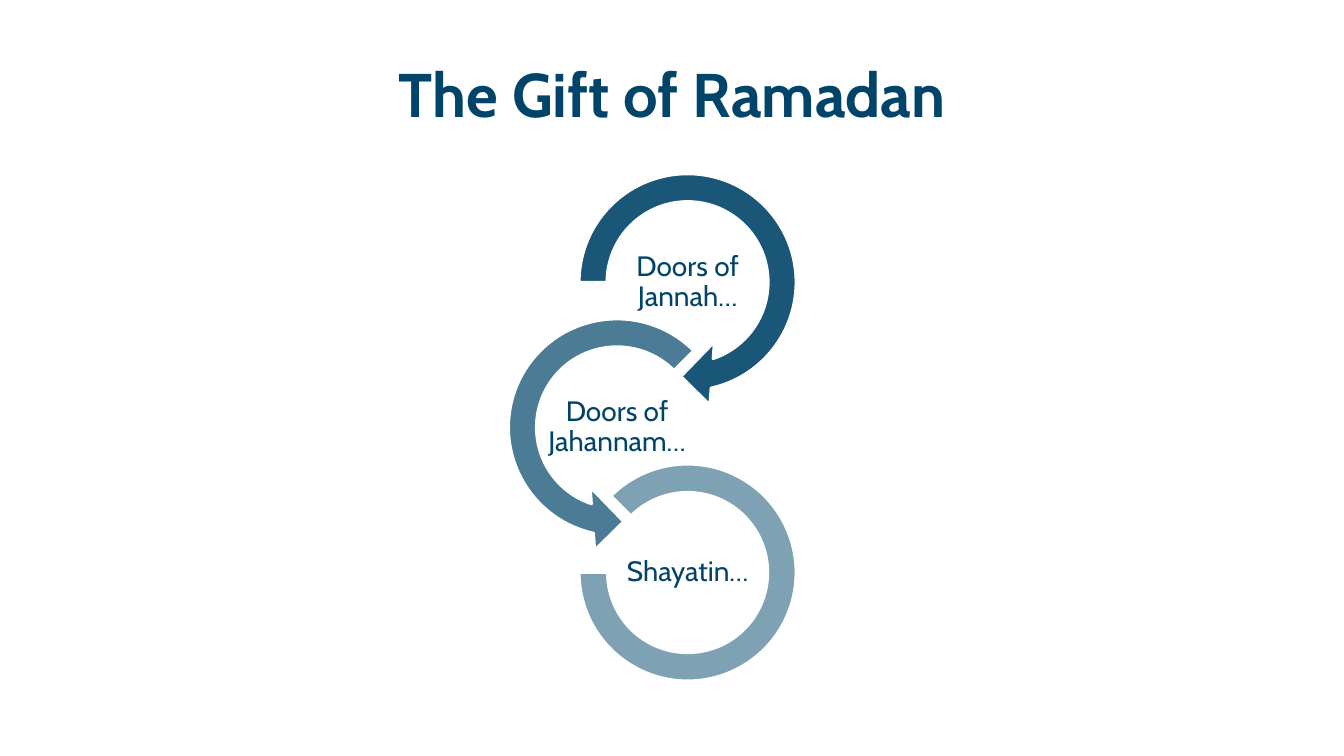
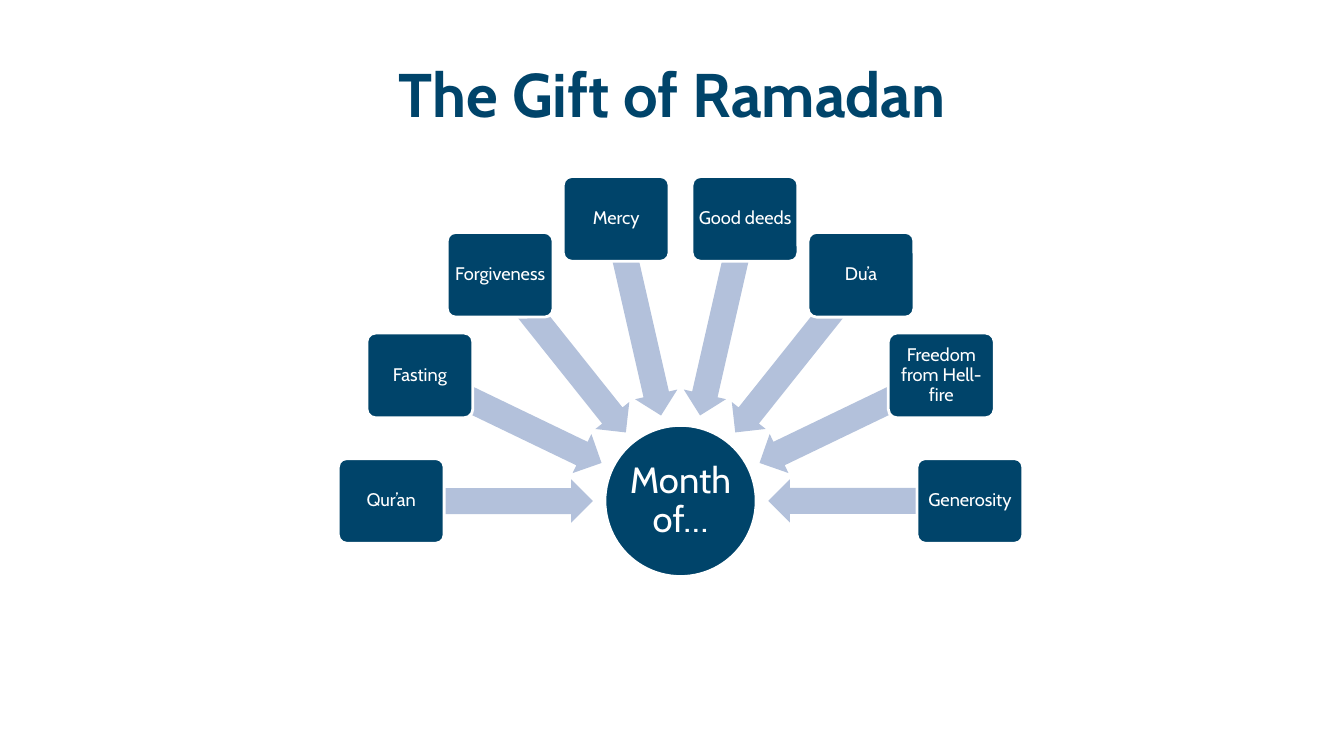
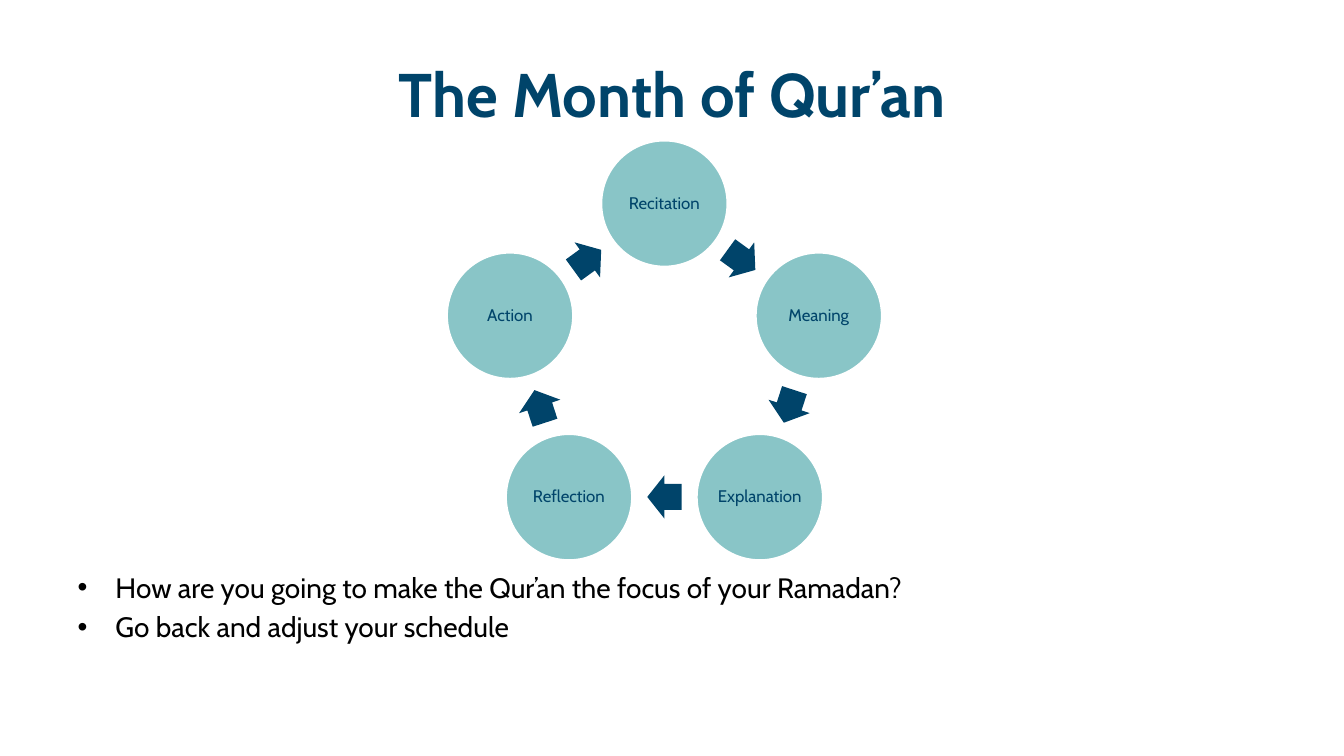
from math import cos, radians, sin

from lxml.etree import SubElement
from pptx import Presentation
from pptx.dml.color import RGBColor
from pptx.enum.shapes import MSO_SHAPE
from pptx.enum.text import MSO_ANCHOR, MSO_AUTO_SIZE, PP_ALIGN
from pptx.oxml.ns import qn
from pptx.util import Inches, Pt

COLORS = {"navy": "00446A", "teal": "89C5C7", "mist": "B3C1DB",
          "white": "FFFFFF", "black": "000000"}
FONT = "Cabin"
TITLE_ONLY, TITLE_AND_BODY = 5, 1


def around(center, radius, degrees):
    """Point on a circle; degrees run clockwise from the right."""
    angle = radians(degrees)
    return center[0] + radius * cos(angle), center[1] + radius * sin(angle)


class Deck:
    def __init__(self):
        self.deck = Presentation()
        self.deck.slide_width = Inches(13.33)
        self.deck.slide_height = Inches(7.5)
        self.page = None

    def color(self, name):
        return RGBColor.from_string(COLORS[name])

    def style(self, para, size, color, bold=False):
        para.font.name = FONT
        para.font.size = Pt(size)
        para.font.bold = bold
        para.font.color.rgb = self.color(color)

    def place(self, box, left, top, width, height):
        box.left, box.top = Inches(left), Inches(top)
        box.width, box.height = Inches(width), Inches(height)

    def new_page(self, title, layout=TITLE_ONLY):
        self.page = self.deck.slides.add_slide(self.deck.slide_layouts[layout])
        box = self.page.shapes.title
        self.place(box, 0.67, 0.3, 12, 1.25)
        box.text_frame.text = title
        box.text_frame.vertical_anchor = MSO_ANCHOR.MIDDLE
        para = box.text_frame.paragraphs[0]
        para.alignment = PP_ALIGN.CENTER
        self.style(para, 44, "navy", bold=True)

    def bullets(self, lines):
        box = self.page.placeholders[1]
        self.place(box, 0.67, 5.61, 12, 1.09)
        frame = box.text_frame
        frame.auto_size = MSO_AUTO_SIZE.NONE
        frame.text = "\n".join(lines)
        for index, para in enumerate(frame.paragraphs):
            para.space_before = Pt(4 if index else 0)
            self.style(para, 20, "black")

    def caption(self, box, text, size, color):
        frame = box.text_frame
        frame.word_wrap = True
        frame.vertical_anchor = MSO_ANCHOR.MIDDLE
        frame.margin_left = frame.margin_right = Inches(0.01)
        frame.margin_top = frame.margin_bottom = Inches(0.01)
        frame.text = text
        para = frame.paragraphs[0]
        para.alignment = PP_ALIGN.CENTER
        para.line_spacing = 0.9
        self.style(para, size, color)

    def label(self, center, width, height, text, size, color):
        box = self.page.shapes.add_textbox(0, 0, 0, 0)
        self.place(box, center[0] - width / 2, center[1] - height / 2, width, height)
        self.caption(box, text, size, color)

    def shape(self, kind, center, width, height, fill, outlined=True,
              adjustments=(), rotation=0, opacity=100):
        shape = self.page.shapes.add_shape(kind, 0, 0, 0, 0)
        self.place(shape, center[0] - width / 2, center[1] - height / 2, width, height)
        for index, value in enumerate(adjustments):
            shape.adjustments[index] = value
        shape.rotation = rotation
        shape.shadow.inherit = False
        shape.fill.solid()
        shape.fill.fore_color.rgb = self.color(fill)
        if opacity < 100:
            tint = shape.element.spPr.find(qn("a:solidFill"))[0]
            SubElement(tint, qn("a:alpha"), val=str(opacity * 1000))
        if outlined:
            shape.line.color.rgb = self.color("white")
            shape.line.width = Pt(2)
        else:
            shape.line.fill.background()
        return shape

    def arrow(self, kind, center, length, fill, rotation):
        self.shape(kind, center, length, 0.43, fill, outlined=False,
                   adjustments=(0.6, 0.5), rotation=rotation)


def chain_page(deck):
    deck.new_page("The Gift of Ramadan")
    rings = [
        ("Doors of Jannah…", MSO_SHAPE.CIRCULAR_ARROW, 6.82, 2.5, 90,
         (0.11, 11.42, 45, 108, 1 / 8)),
        ("Doors of Jahannam…", MSO_SHAPE.LEFT_CIRCULAR_ARROW, 6.12, 2.5, 70,
         (0.11, 11.42, 63, 189, 1 / 8)),
        ("Shayatin…", MSO_SHAPE.BLOCK_ARC, 6.82, 2.15, 50, (135, 108, 0.13)),
    ]
    for index, (text, kind, x, size, opacity, adjustments) in enumerate(rings):
        center = x, 2.8 + 1.44 * index
        deck.shape(kind, center, size, size, "navy",
                   adjustments=adjustments, opacity=opacity)
        deck.label(center, 1.39, 0.69, text, 20, "navy")


def hub_page(deck):
    deck.new_page("The Gift of Ramadan")
    center = 6.75, 4.97
    hub = deck.shape(MSO_SHAPE.OVAL, center, 1.5, 1.5, "navy")
    deck.caption(hub, "Month of…", 26, "white")
    gifts = ["Qur’an", "Fasting", "Forgiveness", "Mercy", "Good deeds", "Du’a",
             "Freedom from Hell-fire", "Generosity"]
    # Boxes fan over a half circle, each arrow pointing at the hub
    for index, gift in enumerate(gifts):
        angle = 180 + index * 180 / (len(gifts) - 1)
        deck.arrow(MSO_SHAPE.LEFT_ARROW, around(center, 1.87, angle), 2, "mist", angle)
        box = deck.shape(MSO_SHAPE.ROUNDED_RECTANGLE, around(center, 2.87, angle),
                         1.05, 0.84, "navy", adjustments=(0.1,))
        deck.caption(box, gift, 13, "white")


def cycle_page(deck):
    deck.new_page("The Month of Qur’an", TITLE_AND_BODY)
    deck.bullets(["How are you going to make the Qur’an the focus of your Ramadan?",
                  "Go back and adjust your schedule"])
    center = 6.59, 3.63
    steps = ["Recitation", "Meaning", "Explanation", "Reflection", "Action"]
    turn = 360 / len(steps)
    # Circles start at the top, with an arrow halfway to the next one
    for index, step in enumerate(steps):
        angle = index * turn - 90
        circle = deck.shape(MSO_SHAPE.OVAL, around(center, 1.61, angle),
                            1.26, 1.26, "teal")
        deck.caption(circle, step, 12, "navy")
        middle = angle + turn / 2
        deck.arrow(MSO_SHAPE.RIGHT_ARROW, around(center, 1.3, middle),
                   0.34, "navy", middle + 90)


def main():
    deck = Deck()
    chain_page(deck)
    hub_page(deck)
    cycle_page(deck)
    deck.deck.save("out.pptx")


if __name__ == "__main__":
    main()
